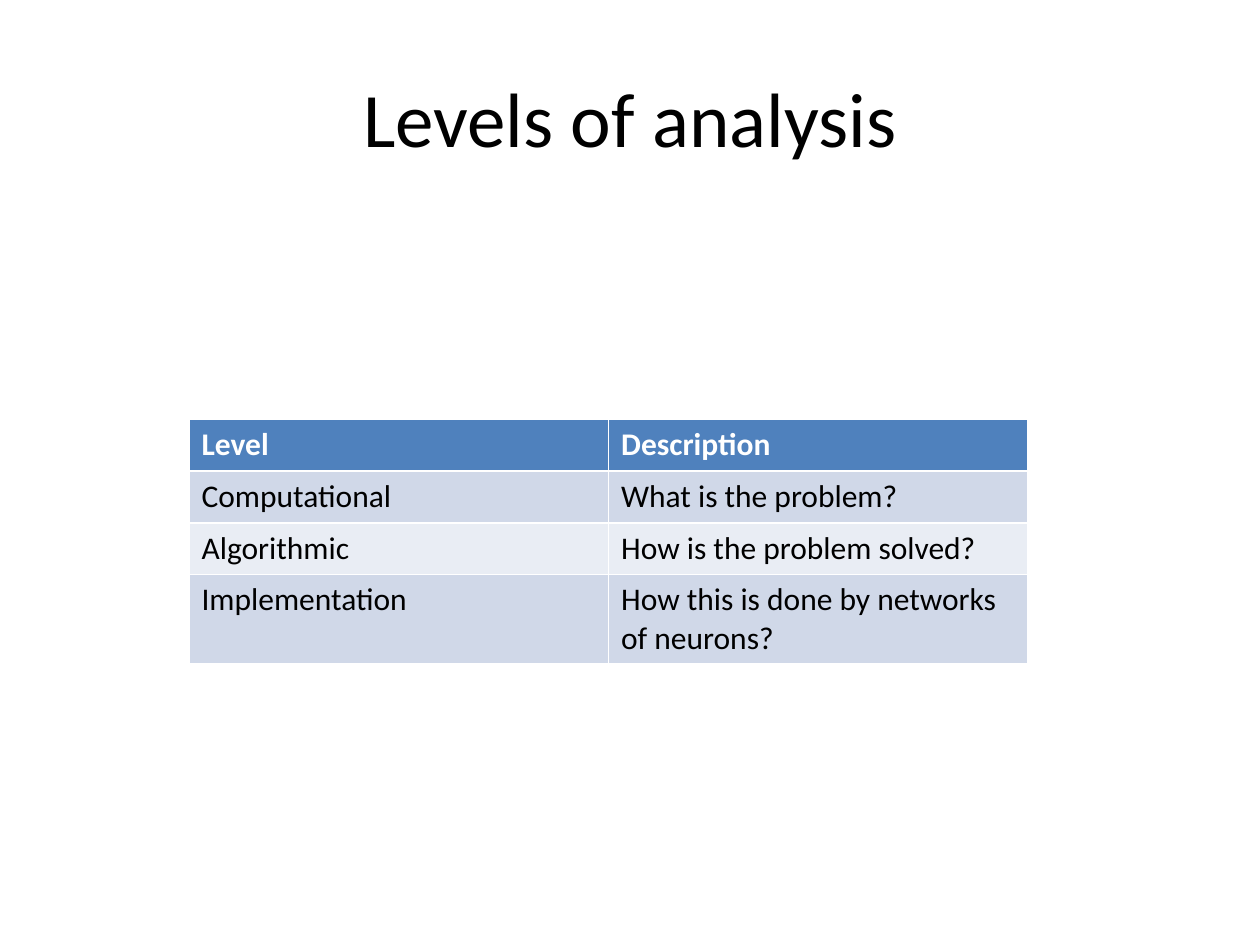
from pptx import Presentation
from pptx.dml.color import RGBColor
from pptx.enum.text import MSO_ANCHOR, PP_ALIGN
from pptx.util import Inches, Pt

TITLE = "Levels of analysis"
ROWS = [
    ("Level", "Description"),
    ("Computational", "What is the problem?"),
    ("Algorithmic", "How is the problem solved?"),
    ("Implementation", "How this is done by networks of neurons?"),
]

FONT = "Calibri"
BLACK = RGBColor(0x00, 0x00, 0x00)
WHITE = RGBColor(0xFF, 0xFF, 0xFF)
HEADER = RGBColor(0x4F, 0x81, 0xBD)
BANDS = (RGBColor(0xE9, 0xED, 0xF4), RGBColor(0xD0, 0xD8, 0xE8))
COL_W, ROW_H = 3.33, 0.41


def style(p, size, color, bold=False):
    p.font.name = FONT
    p.font.size = Pt(size)
    p.font.color.rgb = color
    p.font.bold = bold


prs = Presentation()
prs.slide_width, prs.slide_height = Inches(10), Inches(7.5)
s = prs.slides.add_slide(prs.slide_layouts[5])

# Title
title = s.shapes.title
title.left, title.top = Inches(0.5), Inches(0.3)
title.width, title.height = Inches(9), Inches(1.25)
tf = title.text_frame
tf.text = TITLE
tf.vertical_anchor = MSO_ANCHOR.MIDDLE
tf.paragraphs[0].alignment = PP_ALIGN.CENTER
style(tf.paragraphs[0], 44, BLACK)

# Table of levels; the default table style draws the white cell borders
n_rows, n_cols = len(ROWS), len(ROWS[0])
table = s.shapes.add_table(n_rows, n_cols, Inches(1.5), Inches(3.33),
                           Inches(COL_W * n_cols), Inches(ROW_H * n_rows)).table
for i, row in enumerate(ROWS):
    is_header = i == 0
    for j, text in enumerate(row):
        cell = table.cell(i, j)
        cell.text = text
        cell.fill.solid()
        cell.fill.fore_color.rgb = HEADER if is_header else BANDS[i % 2]
        style(cell.text_frame.paragraphs[0], 18,
              WHITE if is_header else BLACK, is_header)

prs.save("out.pptx")
